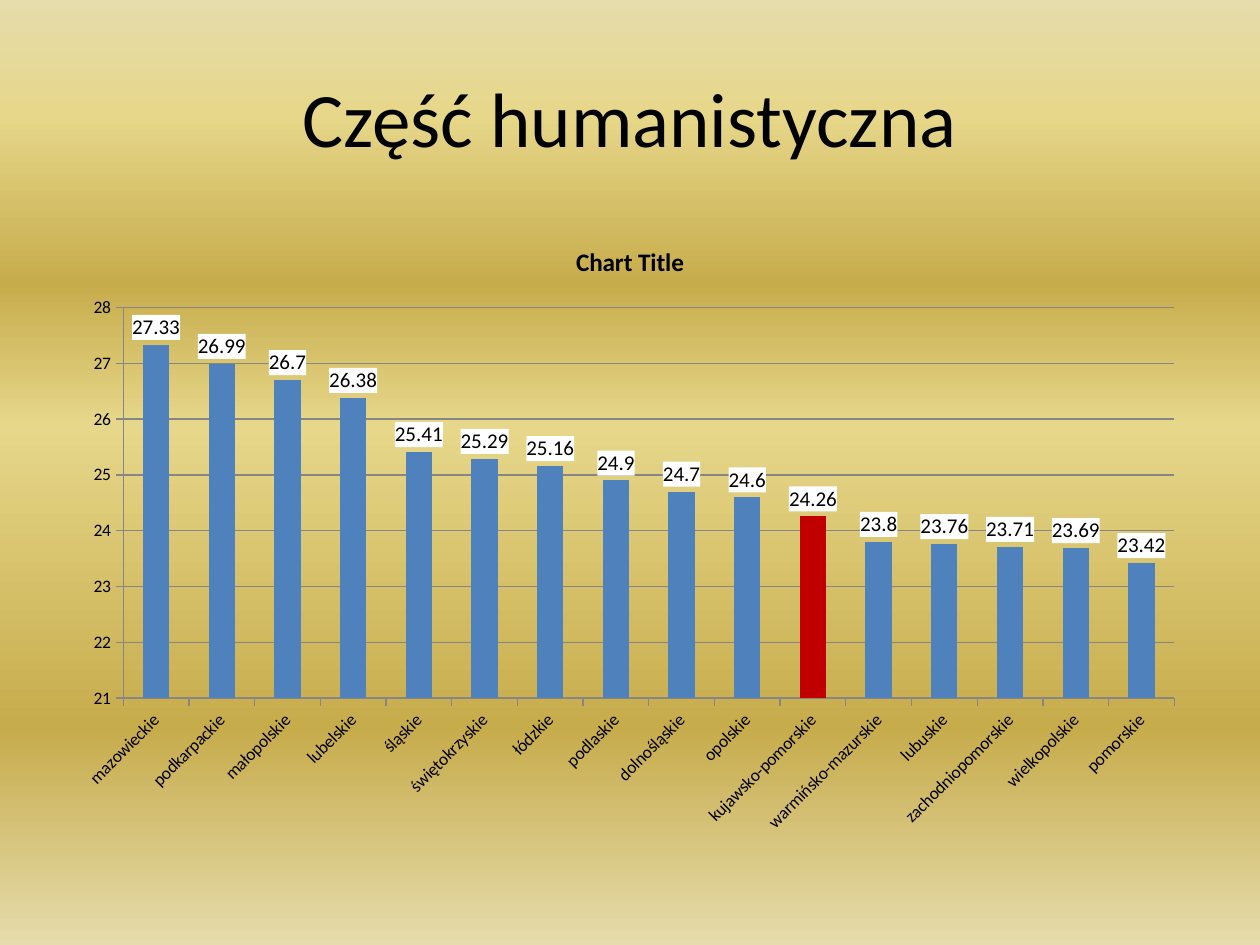
from lxml.etree import SubElement
from pptx import Presentation
from pptx.chart.data import CategoryChartData
from pptx.dml.color import RGBColor
from pptx.enum.chart import XL_CHART_TYPE, XL_LABEL_POSITION, XL_TICK_MARK
from pptx.enum.text import MSO_ANCHOR, PP_ALIGN
from pptx.oxml import parse_xml
from pptx.oxml.ns import nsdecls, qn
from pptx.util import Cm, Pt

TITLE = "Część humanistyczna"
CHART_TITLE = "Chart Title"
FONT = "Calibri"
BLACK, GREY, BLUE, RED = "000000", "868686", "4F81BD", "C00000"
HIGHLIGHT = "kujawsko-pomorskie"
SCORES = {
    "mazowieckie": 27.33, "podkarpackie": 26.99, "małopolskie": 26.7,
    "lubelskie": 26.38, "śląskie": 25.41, "świętokrzyskie": 25.29,
    "łódzkie": 25.16, "podlaskie": 24.9, "dolnośląskie": 24.7,
    "opolskie": 24.6, "kujawsko-pomorskie": 24.26,
    "warmińsko-mazurskie": 23.8, "lubuskie": 23.76,
    "zachodniopomorskie": 23.71, "wielkopolskie": 23.69, "pomorskie": 23.42,
}
GRADIENT = [(0, "E6DCAC"), (12, "E6D78A"), (30, "C7AC4C"),
            (45, "E6D78A"), (77, "C7AC4C"), (100, "E6DCAC")]


def paint(color_format, color):
    color_format.rgb = RGBColor.from_string(color)


def style_font(font, size, bold=False):
    font.name, font.size, font.bold = FONT, Pt(size), bold
    paint(font.color, BLACK)


def style_line(line):
    line.width = Pt(0.75)
    paint(line.color, GREY)


def fill_background(slide):
    fill = slide.background.fill
    fill.gradient()
    fill.gradient_angle = 270
    stops = slide.element.find(".//" + qn("a:gsLst"))
    for stop in list(stops):
        stops.remove(stop)
    for position, color in GRADIENT:
        stop = SubElement(stops, qn("a:gs"), pos=str(position * 1000))
        SubElement(stop, qn("a:srgbClr"), val=color)


def add_title(slide):
    title = slide.shapes.title
    title.left, title.top, title.width, title.height = Cm(1.27), Cm(0.76), Cm(22.86), Cm(3.18)
    title.text_frame.text = TITLE
    title.text_frame.vertical_anchor = MSO_ANCHOR.MIDDLE
    paragraph = title.text_frame.paragraphs[0]
    paragraph.alignment = PP_ALIGN.CENTER
    style_font(paragraph.font, 44)


def add_score_chart(slide):
    data = CategoryChartData()
    data.categories = list(SCORES)
    data.add_series("Series 1", list(SCORES.values()))
    chart = slide.shapes.add_chart(XL_CHART_TYPE.COLUMN_CLUSTERED, Cm(1.27), Cm(4.45),
                                   Cm(22.86), Cm(12.57), data).chart
    style_font(chart.font, 10)
    chart.has_legend = False
    chart.has_title = True
    heading = chart.chart_title.text_frame
    heading.text = CHART_TITLE
    style_font(heading.paragraphs[0].font, 14.4, True)

    for axis in (chart.category_axis, chart.value_axis):
        axis.major_tick_mark = XL_TICK_MARK.OUTSIDE
        axis.minor_tick_mark = XL_TICK_MARK.NONE
        style_font(axis.tick_labels.font, 10)
        style_line(axis.format.line)
    body = chart.category_axis._element.find(".//" + qn("a:bodyPr"))
    body.set("rot", "-2700000")
    value_axis = chart.value_axis
    value_axis.minimum_scale, value_axis.maximum_scale, value_axis.major_unit = 21, 28, 1
    style_line(value_axis.major_gridlines.format.line)

    plot = chart.plots[0]
    plot.gap_width, plot.vary_by_categories = 150, False
    series = plot.series[0]
    highlighted = series.points[list(SCORES).index(HIGHLIGHT)]
    for part, color in ((series, BLUE), (highlighted, RED)):
        part.format.fill.solid()
        paint(part.format.fill.fore_color, color)

    labels = series.data_labels
    labels.show_value = True
    labels.position = XL_LABEL_POSITION.OUTSIDE_END
    style_font(labels.font, 12)
    labels._element.find(qn("c:txPr")).addprevious(parse_xml(
        f'<c:spPr {nsdecls("c", "a")}><a:solidFill><a:srgbClr val="FFFFFF"/>'
        "</a:solidFill></c:spPr>"))


def main():
    """Build the slide with regional humanities exam scores."""
    presentation = Presentation()
    presentation.slide_width, presentation.slide_height = Cm(25.4), Cm(19.05)
    slide = presentation.slides.add_slide(presentation.slide_layouts[5])
    fill_background(slide)
    add_title(slide)
    add_score_chart(slide)
    presentation.save("out.pptx")


if __name__ == "__main__":
    main()
